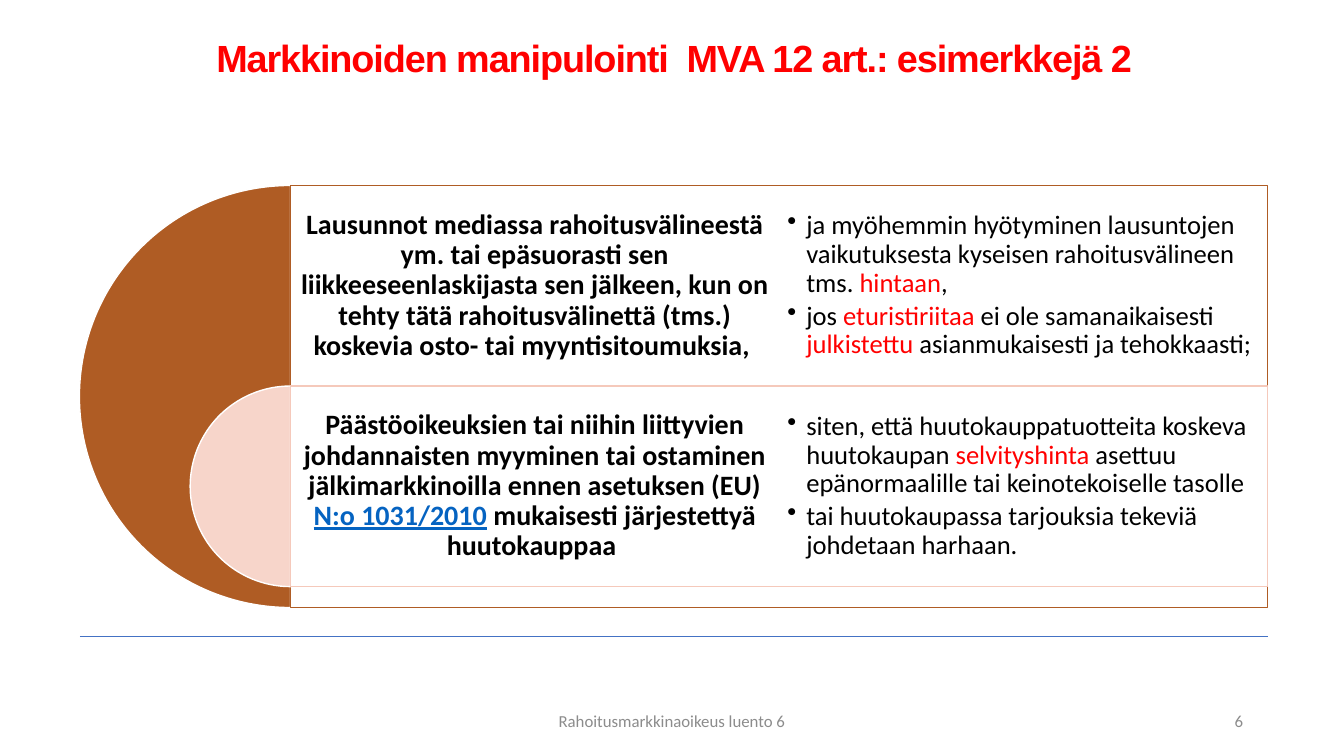
"""Build the slide on examples of market manipulation."""
import pptx
import pptx.util
import pptx.dml.color
import pptx.enum.shapes
import pptx.enum.text
import pptx.oxml
import pptx.oxml.ns
import lxml.etree

Pt = pptx.util.Pt
SHAPE = pptx.enum.shapes.MSO_SHAPE
ALIGN = pptx.enum.text.PP_ALIGN
ANCHOR = pptx.enum.text.MSO_ANCHOR
qn = pptx.oxml.ns.qn

COLORS = {
    "white": "FFFFFF", "black": "000000", "red": "FF0000", "link": "0563C1",
    "brown": "AF5C24", "pink": "F7D5CA", "pink_line": "F5C9BB",
    "rule": "4472C4", "grey": "8C8C8C",
}


class Deck:
    def __init__(self, prs):
        self.slide = prs.slides.add_slide(prs.slide_layouts[6])
        self.font = "Calibri"

    def color(self, name):
        return pptx.dml.color.RGBColor.from_string(COLORS[name])

    def shape(self, kind, x, y, w, h, fill, line, alpha=None):
        sp = self.slide.shapes.add_shape(kind, Pt(x), Pt(y), Pt(w), Pt(h))
        sp.shadow.inherit = False
        sp.fill.solid()
        sp.fill.fore_color.rgb = self.color(fill)
        sp.line.color.rgb = self.color(line)
        sp.line.width = Pt(1)
        if alpha:
            clr = sp._element.spPr.find(qn("a:solidFill"))[0]
            lxml.etree.SubElement(clr, qn("a:alpha"), val=str(alpha * 1000))
        return sp

    def half_disc(self, center, y, size, fill):
        sp = self.shape(SHAPE.PIE, center - size / 2, y, size, size, fill, "white")
        sp.adjustments[0] = 54
        sp.adjustments[1] = 162

    def rule(self, x1, x2, y, color):
        line = self.slide.shapes.add_connector(
            pptx.enum.shapes.MSO_CONNECTOR.STRAIGHT, Pt(x1), Pt(y), Pt(x2), Pt(y))
        line.line.color.rgb = self.color(color)
        line.line.width = Pt(1)
        lxml.etree.SubElement(line._element.spPr, qn("a:effectLst"))

    def text(self, x, y, w, h, paragraphs, size, color="black", bold=False,
             align=ALIGN.LEFT, anchor=ANCHOR.MIDDLE, inset=6, leading=1.0,
             font=None, bullet=False, spacing=0):
        tf = self.slide.shapes.add_textbox(Pt(x), Pt(y), Pt(w), Pt(h)).text_frame
        tf.word_wrap = True
        tf.vertical_anchor = anchor
        tf.margin_left = tf.margin_right = Pt(inset)
        tf.margin_top = tf.margin_bottom = Pt(inset)
        for i, runs in enumerate(paragraphs):
            p = tf.add_paragraph() if i else tf.paragraphs[0]
            p.alignment = align
            p.line_spacing = leading
            p.font.name = font or self.font
            p.font.size = Pt(size)
            p.font.bold = bold
            if bullet:
                self.bullet(p)
            for words, run_color in runs:
                r = p.add_run()
                r.text = words
                r.font.color.rgb = self.color(run_color or color)
                if run_color == "link":
                    r.font.underline = True
                if spacing:
                    r.font._element.set("spc", str(int(spacing * 100)))

    def bullet(self, p):
        p.space_after = Pt(3)
        pPr = p._p.get_or_add_pPr()
        pPr.set("marL", str(Pt(13.5)))
        pPr.set("indent", str(-Pt(13.5)))
        mark = pptx.oxml.parse_xml(
            f'<a:buChar {pptx.oxml.ns.nsdecls("a")} char="•"/>')
        pPr.find(qn("a:defRPr")).addprevious(mark)


LEFT, RIGHT, TOP = 57, 905.5, 132.5
PANEL_X, COLUMN_W, ROW_H, DISC = 207.5, 349, 143.25, 301.5

ROWS = [
    {
        "panel": (DISC, "brown", "brown"),
        "heading": [("Lausunnot mediassa rahoitusvälineestä ym. tai epäsuorasti sen "
                     "liikkeeseenlaskijasta sen jälkeen, kun on tehty tätä "
                     "rahoitusvälinettä (tms.) koskevia osto- tai "
                     "myyntisitoumuksia, ", None)],
        "bullets": [
            [("ja myöhemmin hyötyminen lausuntojen vaikutuksesta kyseisen "
              "rahoitusvälineen tms. ", None), ("hintaan", "red"), (",", None)],
            [("jos ", None), ("eturistiriitaa", "red"),
             (" ei ole samanaikaisesti ", None), ("julkistettu ", "red"),
             ("asianmukaisesti ja tehokkaasti;", None)],
        ],
    },
    {
        "panel": (ROW_H, "pink", "pink_line"),
        "heading": [("Päästöoikeuksien tai niihin liittyvien johdannaisten myyminen "
                     "tai ostaminen jälkimarkkinoilla ennen asetuksen (EU) ", None),
                    ("N:o 1031/2010", "link"),
                    (" mukaisesti järjestettyä huutokauppaa ", None)],
        "bullets": [
            [("siten, että huutokauppatuotteita koskeva huutokaupan ", None),
             ("selvityshinta", "red"),
             (" asettuu epänormaalille tai keinotekoiselle tasolle", None)],
            [("tai huutokaupassa tarjouksia tekeviä johdetaan harhaan.", None)],
        ],
    },
]


def main():
    prs = pptx.Presentation()
    prs.slide_width, prs.slide_height = Pt(960), Pt(540)
    deck = Deck(prs)
    deck.rule(LEFT, RIGHT, 454.5, "rule")
    deck.text(LEFT, 30, RIGHT - LEFT, 94.5,
              [[("Markkinoiden manipulointi  MVA 12 art.: esimerkkejä 2", None)]],
              27, "red", bold=True, align=ALIGN.CENTER, anchor=ANCHOR.TOP,
              inset=0, leading=0.85, font="Arial", spacing=-0.8)
    for i, row in enumerate(ROWS):
        y = TOP + i * ROW_H
        size, fill, line = row["panel"]
        deck.half_disc(PANEL_X, y, size, fill)
        deck.shape(SHAPE.RECTANGLE, PANEL_X, y, 2 * COLUMN_W, size, "white", line, 90)
        deck.text(PANEL_X, y, COLUMN_W, ROW_H, [row["heading"]], 20, bold=True,
                  align=ALIGN.CENTER, leading=0.9)
        deck.text(PANEL_X + COLUMN_W, y, COLUMN_W, ROW_H, row["bullets"], 19,
                  leading=0.9, bullet=True)
    deck.text(318, 500.5, 324, 28.75, [[("Rahoitusmarkkinaoikeus luento 6", None)]],
              12, "grey", align=ALIGN.CENTER)
    deck.text(678, 500.5, 216, 28.75, [[("6", None)]], 12, "grey", align=ALIGN.RIGHT)
    prs.save("out.pptx")


if __name__ == "__main__":
    main()
